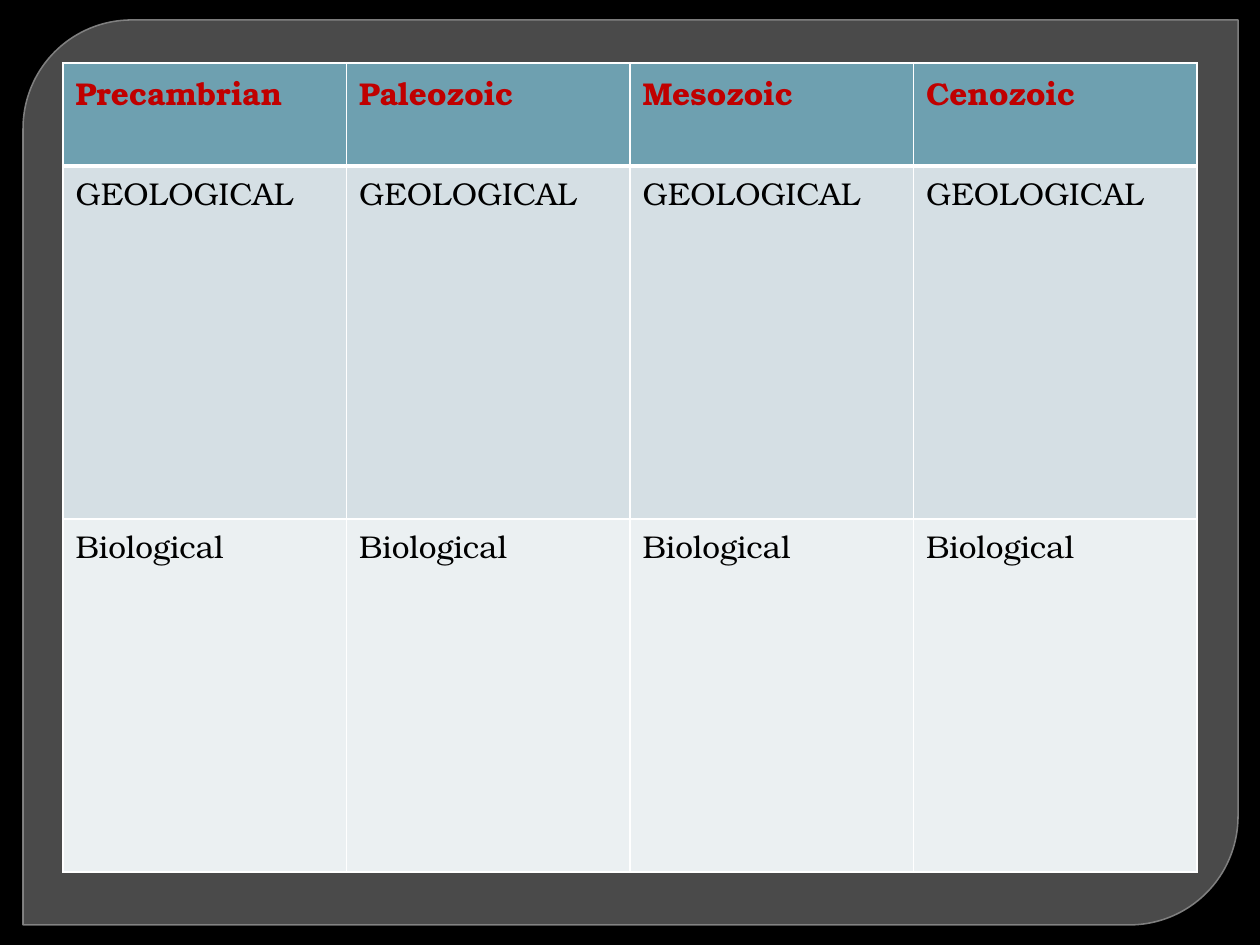
from dataclasses import dataclass

from lxml.etree import SubElement
from pptx import Presentation
from pptx.dml.color import RGBColor
from pptx.enum.shapes import MSO_SHAPE
from pptx.oxml.ns import qn
from pptx.util import Emu, Pt

PX = 914400 / 126


@dataclass(frozen=True)
class Theme:
    background: str = "000000"
    panel: str = "737373"
    panel_line: str = "8B8B8B"
    border: str = "FFFFFF"
    header_text: str = "C00000"
    body_text: str = "000000"
    row_fills: tuple = ("6EA0B0", "D5DFE4", "EBF0F2")
    font: str = "TeX Gyre Bonum"
    text_size: int = 18


theme = Theme()


def px(length):
    return Emu(round(length * PX))


def add_border(cell, side, points):
    """Draw one side of a cell: L, R, T or B, in that order."""
    line = SubElement(cell._tc.get_or_add_tcPr(), qn(f"a:ln{side}"), w=str(Pt(points)))
    fill = SubElement(line, qn("a:solidFill"))
    SubElement(fill, qn("a:srgbClr"), val=theme.border)


presentation = Presentation()
presentation.slide_width = px(1260)
presentation.slide_height = px(945)
slide = presentation.slides.add_slide(presentation.slide_layouts[6])
slide.background.fill.solid()
slide.background.fill.fore_color.rgb = RGBColor.from_string(theme.background)

# Translucent panel behind the table
panel = slide.shapes.add_shape(
    MSO_SHAPE.ROUND_2_DIAG_RECTANGLE, px(23), px(20), px(1215), px(905)
)
panel.shadow.inherit = False
panel.adjustments[0] = 0.12
panel.adjustments[1] = 0
panel.line.width = Pt(0.87)
for fill, color, opacity in (
    (panel.fill, theme.panel, 65),
    (panel.line.fill, theme.panel_line, 88),
):
    fill.solid()
    fill.fore_color.rgb = RGBColor.from_string(color)
for color, opacity in zip(panel._element.spPr.iter(qn("a:srgbClr")), (65, 88)):
    SubElement(color, qn("a:alpha"), val=str(opacity * 1000))

# Eras across, one row for each kind of event
eras = ["Precambrian", "Paleozoic", "Mesozoic", "Cenozoic"]
rows = [eras, ["GEOLOGICAL"] * len(eras), ["Biological"] * len(eras)]
row_heights = [103, 353, 353]
table_width = 1134

table = slide.shapes.add_table(
    len(rows), len(eras), px(63), px(63), px(table_width), px(sum(row_heights))
).table
for column in table.columns:
    column.width = px(table_width / len(eras))

for row_index, texts in enumerate(rows):
    is_header = row_index == 0
    table.rows[row_index].height = px(row_heights[row_index])
    for column_index, text in enumerate(texts):
        cell = table.cell(row_index, column_index)
        for side in "LRTB":
            heavy = (is_header and side == "B") or (row_index == 1 and side == "T")
            add_border(cell, side, 3 if heavy else 1)
        cell.fill.solid()
        cell.fill.fore_color.rgb = RGBColor.from_string(theme.row_fills[row_index])
        cell.text_frame.text = text
        font = cell.text_frame.paragraphs[0].runs[0].font
        font.name = theme.font
        font.size = Pt(theme.text_size)
        font.bold = is_header
        font.color.rgb = RGBColor.from_string(
            theme.header_text if is_header else theme.body_text
        )

presentation.save("out.pptx")
